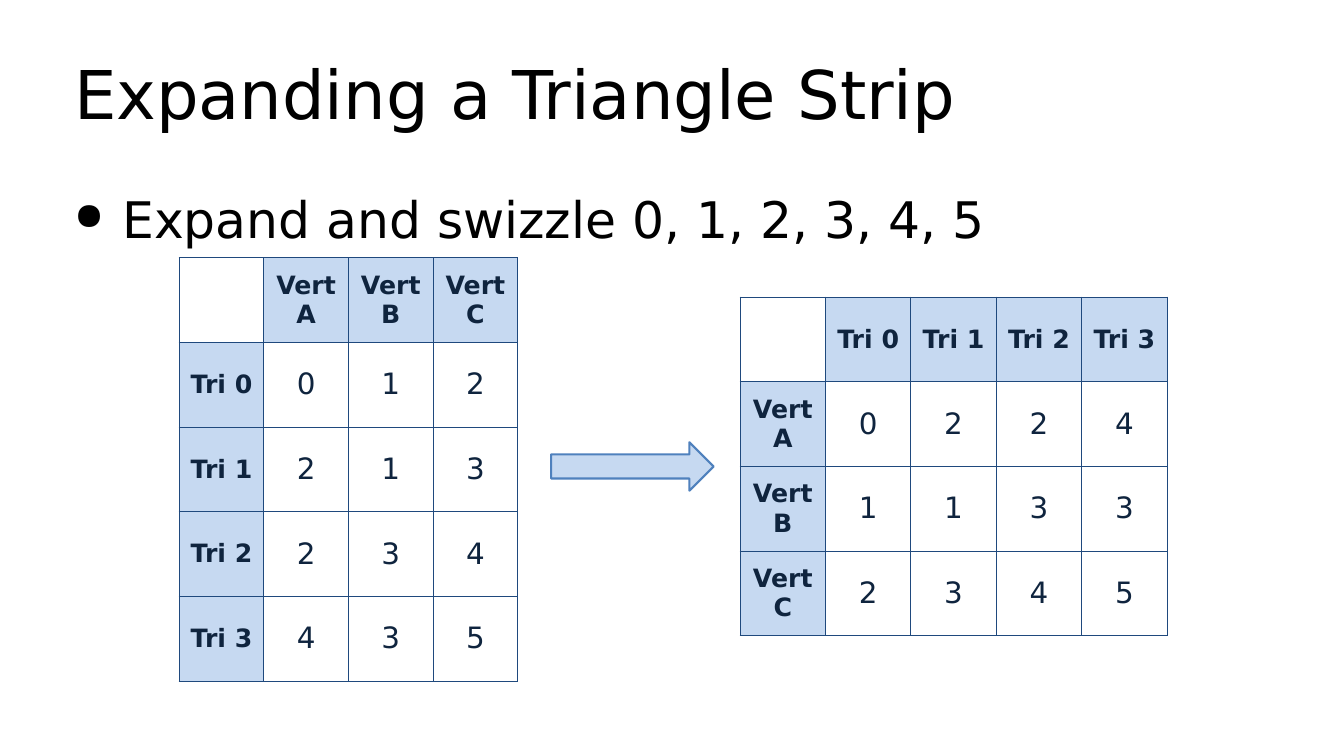
from pptx import Presentation, util as u
from pptx.dml.color import RGBColor
from pptx.enum import shapes, text
from pptx.oxml import parse_xml
from pptx.oxml.ns import nsdecls

# Content
HEAD = "Expanding a Triangle Strip"
POINT = "Expand and swizzle 0, 1, 2, 3, 4, 5"
BY_TRI = [
    ("", "Vert A", "Vert B", "Vert C"),
    ("Tri 0", "0", "1", "2"),
    ("Tri 1", "2", "1", "3"),
    ("Tri 2", "2", "3", "4"),
    ("Tri 3", "4", "3", "5"),
]
BY_VERT = list(zip(*BY_TRI))  # the swizzle swaps rows and columns

# Look and layout
FONT = "DejaVu Sans"
BLACK, INK, PALE, EDGE, BLUE = "000000", "0F243E", "C6D9F1", "1F497D", "4F81BD"
WIDE, HIGH = 17.78, 10
SIDE = 0.05 * WIDE
TOP = 0.233 * HIGH
ROW = 1.12
MID = 6.17  # centre line shared by arrow and grids


def color(code):
    return RGBColor.from_string(code)


def write(frame, words, size=28, ink=INK, bold=False, align=None, anchor=None):
    frame.word_wrap = True
    frame.vertical_anchor = anchor
    para = frame.paragraphs[0]
    para.alignment = align
    run = para.add_run()
    run.text = words
    font = run.font
    font.name, font.size, font.bold = FONT, u.Pt(size), bold
    font.color.rgb = color(ink)


def place(shape, left, top, width, height):
    shape.left, shape.top = u.Inches(left), u.Inches(top)
    shape.width, shape.height = u.Inches(width), u.Inches(height)


def border(cell):
    props = cell._tc.get_or_add_tcPr()
    for side in "LRTB":
        props.append(parse_xml(
            f'<a:ln{side} {nsdecls("a")} w="12700"><a:solidFill>'
            f'<a:srgbClr val="{EDGE}"/></a:solidFill></a:ln{side}>'))


def bullet(para, indent):
    props = para._p.get_or_add_pPr()
    props.set("marL", str(u.Inches(indent)))
    props.set("indent", str(-u.Inches(indent)))
    for part in (f'buClr {nsdecls("a")}><a:srgbClr val="{BLACK}"/></a:buClr>',
                 f'buSzPct {nsdecls("a")} val="75000"/>',
                 f'buFont {nsdecls("a")} typeface="OpenSymbol"/>',
                 f'buChar {nsdecls("a")} char="●"/>'):
        props.append(parse_xml("<a:" + part))


def grid(slide, rows, left, col):
    count, span = len(rows), len(rows[0])
    high = count * ROW
    frame = slide.shapes.add_table(
        count, span, u.Inches(left), u.Inches(MID - high / 2 + 0.04 * (count > 4)),
        u.Inches(span * col), u.Inches(high))
    table = frame.table
    table.first_row = table.horz_banding = False
    for line in table.columns:
        line.width = u.Inches(col)
    for line in table.rows:
        line.height = u.Inches(ROW)
    for r, row in enumerate(rows):
        for c, words in enumerate(row):
            cell = table.cell(r, c)
            border(cell)
            label = r == 0 or c == 0
            if label and words:
                cell.fill.solid()
                cell.fill.fore_color.rgb = color(PALE)
            else:
                cell.fill.background()
            if words:
                write(cell.text_frame, words, size=24 if label else 28,
                      bold=label, align=text.PP_ALIGN.CENTER)
                cell.vertical_anchor = text.MSO_ANCHOR.MIDDLE


def main():
    deck = Presentation()
    deck.slide_width, deck.slide_height = u.Inches(WIDE), u.Inches(HIGH)
    slide = deck.slides.add_slide(deck.slide_layouts[1])

    # Title and bullet
    title, body = slide.placeholders
    place(title, SIDE, 0.13, 0.9 * WIDE, 2.2)
    place(body, SIDE, TOP, 0.9 * WIDE, HIGH - TOP)
    for box in (title, body):
        frame = box.text_frame
        frame.auto_size = text.MSO_AUTO_SIZE.NONE
        frame.margin_left = frame.margin_right = u.Inches(0.09)
    write(title.text_frame, HEAD, size=64, ink=BLACK,
          align=text.PP_ALIGN.LEFT, anchor=text.MSO_ANCHOR.MIDDLE)
    body.text_frame.margin_top = u.Inches(0.16)
    first = body.text_frame.paragraphs[0]
    first.space_before = u.Pt(0)
    bullet(first, 0.64)
    write(body.text_frame, POINT, size=48, ink=BLACK, anchor=text.MSO_ANCHOR.TOP)

    # Index grids, before and after
    grid(slide, BY_TRI, 2.37, 1.12)
    grid(slide, BY_VERT, 9.79, 1.13)

    # Arrow between them
    arrow = slide.shapes.add_shape(
        shapes.MSO_SHAPE.RIGHT_ARROW, u.Inches(7.29), u.Inches(MID - 0.32),
        u.Inches(2.15), u.Inches(0.64))
    arrow.shadow.inherit = False
    arrow.fill.solid()
    arrow.fill.fore_color.rgb = color(PALE)
    arrow.line.color.rgb = color(BLUE)
    arrow.line.width = u.Pt(2)

    deck.save("out.pptx")


if __name__ == "__main__":
    main()
